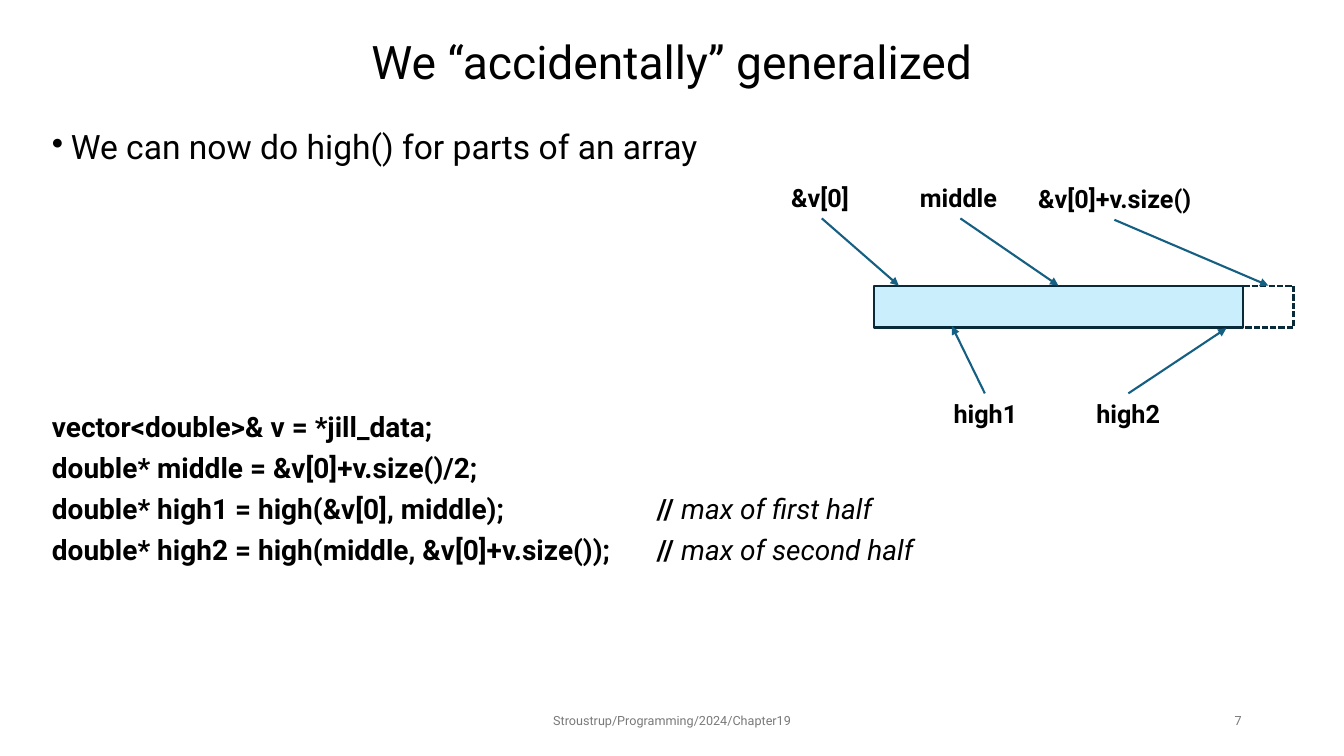
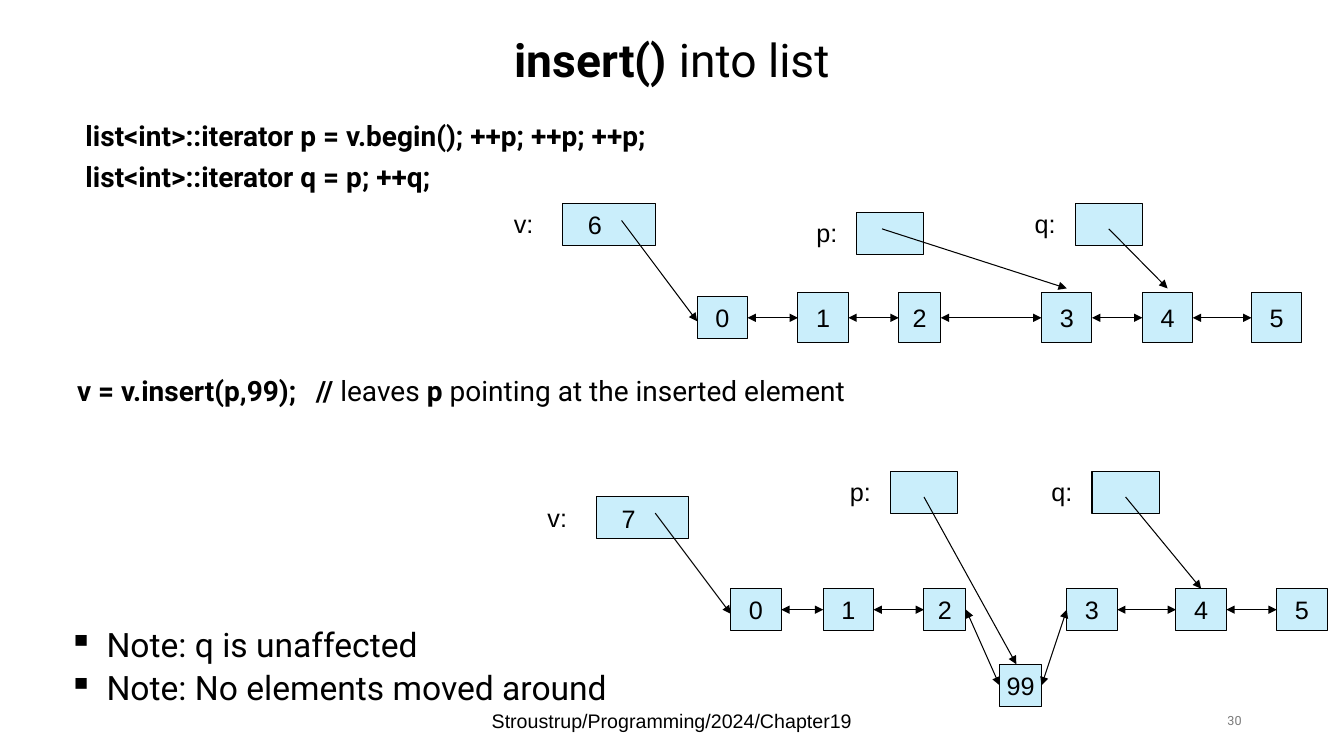
from dataclasses import dataclass
from itertools import pairwise
from typing import Optional

from lxml.etree import SubElement
from pptx import Presentation
from pptx.dml.color import RGBColor
from pptx.enum.dml import MSO_LINE
from pptx.enum.shapes import MSO_CONNECTOR, MSO_SHAPE
from pptx.enum.text import MSO_ANCHOR, MSO_AUTO_SIZE, PP_ALIGN
from pptx.oxml.ns import qn
from pptx.slide import Slide
from pptx.text.text import TextFrame
from pptx.util import Pt


@dataclass(frozen=True)
class Theme:
    ink: str = "000000"
    gray: str = "797979"
    fill: str = "CAEEFB"
    edge: str = "092A39"
    teal: str = "156082"
    sans: str = "Roboto"
    plain: str = "Arial"
    title: float = 33
    lead: float = 24
    code: float = 20
    label: float = 18
    foot: float = 14
    small: float = 9
    thin: float = 0.75
    thick: float = 1.5


T = Theme()
Point = tuple[float, float]


@dataclass(frozen=True)
class Style:
    size: float
    font: str = T.sans
    color: str = T.ink


@dataclass(frozen=True)
class Run:
    text: str
    bold: bool = False
    slant: bool = False


@dataclass(frozen=True)
class Para:
    runs: tuple[Run, ...]
    align: PP_ALIGN = PP_ALIGN.LEFT
    line: float = 1.0
    gap: float = 0
    mark: str = ""
    indent: float = 0
    tab: float = 0


@dataclass(frozen=True)
class Box:
    x: float
    y: float
    w: float
    h: float = 30

    @property
    def left(self) -> Point:
        return self.x, self.y + self.h / 2

    @property
    def right(self) -> Point:
        return self.x + self.w, self.y + self.h / 2

    def place(self) -> tuple[Pt, Pt, Pt, Pt]:
        return Pt(self.x), Pt(self.y), Pt(self.w), Pt(self.h)


@dataclass(frozen=True)
class Cell:
    text: str
    box: Box
    inset: float = 0


@dataclass(frozen=True)
class Arrow:
    start: Point
    end: Point


@dataclass(frozen=True)
class Holder:
    name: str
    box: Box
    arrow: Arrow
    gap: float
    text: str = ""


@dataclass(frozen=True)
class Chain:
    holders: tuple[Holder, ...]
    cells: tuple[Cell, ...]


TITLE = Style(T.title)
LEAD = Style(T.lead)
CODE = Style(T.code)
NAME = Style(T.label)
NODE = Style(T.label, T.plain)
SMALL = Style(T.small, T.sans, T.gray)
FOOT = Style(T.foot, T.plain)


def tint(code: str) -> RGBColor:
    return RGBColor.from_string(code)


def write(frame: TextFrame, paras: list[Para], style: Style) -> None:
    for i, para in enumerate(paras):
        p = frame.paragraphs[0] if i == 0 else frame.add_paragraph()
        props = p._p.get_or_add_pPr()
        if para.mark:
            props.set("marL", str(Pt(para.indent)))
            props.set("indent", str(-Pt(para.indent)))
            SubElement(props, qn("a:buChar")).set("char", para.mark)
        if para.tab:
            stop = SubElement(SubElement(props, qn("a:tabLst")), qn("a:tab"))
            stop.set("pos", str(Pt(para.tab)))
            stop.set("algn", "l")
        p.alignment = para.align
        p.line_spacing = para.line
        p.space_before = Pt(para.gap if i else 0)
        for part in para.runs:
            r = p.add_run()
            r.text = part.text
            r.font.name = style.font
            r.font.size = Pt(style.size)
            r.font.color.rgb = tint(style.color)
            r.font.bold = part.bold
            r.font.italic = part.slant


def add_text(slide: Slide, box: Box, paras: list[Para], style: Style,
             wrap: bool = True, anchor: MSO_ANCHOR = MSO_ANCHOR.TOP) -> None:
    frame = slide.shapes.add_textbox(*box.place()).text_frame
    frame.word_wrap = wrap
    frame.vertical_anchor = anchor
    write(frame, paras, style)


def add_rect(slide: Slide, box: Box, fill: Optional[str], color: str,
             width: float, dash: bool = False) -> TextFrame:
    shape = slide.shapes.add_shape(MSO_SHAPE.RECTANGLE, *box.place())
    shape.shadow.inherit = False
    if fill:
        shape.fill.solid()
        shape.fill.fore_color.rgb = tint(fill)
    else:
        shape.fill.background()
    shape.line.color.rgb = tint(color)
    shape.line.width = Pt(width)
    if dash:
        shape.line.dash_style = MSO_LINE.SQUARE_DOT
    return shape.text_frame


def add_cell(slide: Slide, cell: Cell) -> None:
    frame = add_rect(slide, cell.box, T.fill, T.ink, T.thin)
    if cell.text:
        frame.margin_left = frame.margin_top = frame.margin_bottom = 0
        frame.margin_right = Pt(cell.inset)
        frame.vertical_anchor = MSO_ANCHOR.MIDDLE
        write(frame, [Para((Run(cell.text),), PP_ALIGN.CENTER)], NODE)


def add_arrow(slide: Slide, arrow: Arrow, color: str, width: float,
              both: bool = False) -> None:
    ends = (Pt(n) for n in (*arrow.start, *arrow.end))
    line = slide.shapes.add_connector(MSO_CONNECTOR.STRAIGHT, *ends)
    line.line.color.rgb = tint(color)
    line.line.width = Pt(width)
    pen = line.line._get_or_add_ln()
    for tip in ("a:headEnd", "a:tailEnd") if both else ("a:tailEnd",):
        SubElement(pen, qn(tip)).set("type", "triangle")
    SubElement(line._element.spPr, qn("a:effectLst"))


def add_chain(slide: Slide, chain: Chain) -> None:
    for cell in chain.cells:
        add_cell(slide, cell)
    for a, b in pairwise(chain.cells):
        add_arrow(slide, Arrow(a.box.right, b.box.left), T.ink, T.thin, True)
    for item in chain.holders:
        box = item.box
        add_cell(slide, Cell(item.text, box, 20))
        add_text(slide, Box(box.x - item.gap, box.y, item.gap),
                 [Para((Run(item.name),))], NODE)
        add_arrow(slide, item.arrow, T.ink, T.thin)


def add_slide(deck, box: Box, title: tuple[Run, ...], page: str,
              foot: Style) -> Slide:
    slide = deck.slides.add_slide(deck.slide_layouts[5])
    head = slide.shapes.title
    head.left, head.top, head.width, head.height = box.place()
    frame = head.text_frame
    frame.auto_size = MSO_AUTO_SIZE.NONE
    frame.vertical_anchor = MSO_ANCHOR.MIDDLE
    write(frame, [Para(title, PP_ALIGN.CENTER, 0.9)], TITLE)
    for x, w, text, align, style in (
        (318, 324, "Stroustrup/Programming/2024/Chapter19", PP_ALIGN.CENTER, foot),
        (678, 216, page, PP_ALIGN.RIGHT, SMALL),
    ):
        add_text(slide, Box(x, 500.5, w, 28.8), [Para((Run(text),), align)],
                 style, anchor=MSO_ANCHOR.MIDDLE)
    return slide


def code(*runs: Run, tab: float = 0) -> Para:
    return Para(runs, line=0.9, gap=7.5, tab=tab)


def bullet(text: str, mark: str, indent: float) -> Para:
    return Para((Run(text),), line=0.9, gap=4.8, mark=mark, indent=indent)


def build_high(deck) -> None:
    slide = add_slide(deck, Box(66, 21.6, 828, 49),
                      (Run("We “accidentally” generalized"),), "7", SMALL)
    add_text(slide, Box(30, 90, 756, 36),
             [bullet("We can now do high() for parts of an array", "•", 13.5)], LEAD)
    rows = (
        ("vector<double>& v = *jill_data;", ""),
        ("double* middle = &v[0]+v.size()/2;", ""),
        ("double* high1 = high(&v[0], middle);\t// ", "max of first half"),
        ("double* high2 = high(middle, &v[0]+v.size());\t// ", "max of second half"),
    )
    add_text(slide, Box(30, 292, 756, 126),
             [code(Run(text, True), *([Run(note, slant=True)] if note else []), tab=432)
              for text, note in rows], CODE)
    add_rect(slide, Box(624, 204, 264), T.fill, T.edge, T.thick)
    add_rect(slide, Box(888, 204, 36), None, T.edge, T.thick, True)
    for text, x, y, w, wrap, start, end in (
        ("&v[0]", 558, 126.5, 58, False, (587, 156), (642, 204)),
        ("middle", 650, 126.5, 72, False, (686, 156), (756, 204)),
        ("&v[0]+v.size()", 734.5, 127.5, 124, False, (796, 157), (906, 204)),
        ("high1", 674, 281, 60, True, (703.5, 281), (680, 233)),
        ("high2", 776, 281, 60, True, (806, 281), (876, 234.5)),
    ):
        add_text(slide, Box(x, y, w), [Para((Run(text, True),))], NAME, wrap)
        add_arrow(slide, Arrow(start, end), T.teal, T.thick)


BEFORE = Chain(
    (
        Holder("v:", Box(402, 145.5, 66), Arrow((444, 157.5), (498, 229.5)), 42, "6"),
        Holder("p:", Box(612, 152, 48), Arrow((630, 163.5), (762, 206)), 36),
        Holder("q:", Box(768, 145.5, 48), Arrow((792, 163.5), (834, 206)), 36),
    ),
    (Cell("0", Box(498, 212, 36)),)
    + tuple(Cell(text, Box(x, 209, w, 36)) for text, x, w in (
        ("1", 570, 36), ("2", 642, 30), ("3", 744, 36), ("4", 816, 36), ("5", 894, 36))),
)
AFTER = Chain(
    (
        Holder("v:", Box(426, 355, 66), Arrow((468, 366.5), (522, 438.5)), 42, "7"),
        Holder("p:", Box(636, 337, 48), Arrow((660, 355), (726, 474.5)), 36),
        Holder("q:", Box(780, 337, 48), Arrow((804, 355), (858, 420.5)), 36),
    ),
    tuple(Cell(text, Box(x, y, w)) for text, x, y, w in (
        ("0", 522, 420.5, 36), ("1", 588, 420.5, 36), ("2", 660, 420.5, 30),
        ("99", 714, 474.5, 30), ("3", 762, 420.5, 36), ("4", 840, 420.5, 36),
        ("5", 912, 420.5, 36))),
)


def build_list(deck) -> None:
    slide = add_slide(deck, Box(156, 0, 648, 90),
                      (Run("insert() ", True), Run("into list")), "30", FOOT)
    add_text(slide, Box(54, 84, 750, 58), [
        code(Run("list<int>::iterator p = v.begin(); ++p; ++p; ++p;", True)),
        code(Run("list<int>::iterator q = p; ++q;", True)),
    ], CODE)
    add_text(slide, Box(48, 266, 750, 42), [code(
        Run("v = v.insert(p,99);\t// ", True), Run("leaves"), Run(" p ", True),
        Run("pointing at the inserted element"), tab=170.5)], CODE)
    add_text(slide, Box(42, 445.5, 750, 64), [
        bullet(text, "▪", 27)
        for text in ("Note: q is unaffected", "Note: No elements moved around")], LEAD)
    for chain in (BEFORE, AFTER):
        add_chain(slide, chain)


def main() -> None:
    deck = Presentation()
    deck.slide_width, deck.slide_height = Pt(960), Pt(540)
    build_high(deck)
    build_list(deck)
    deck.save("out.pptx")


if __name__ == "__main__":
    main()
